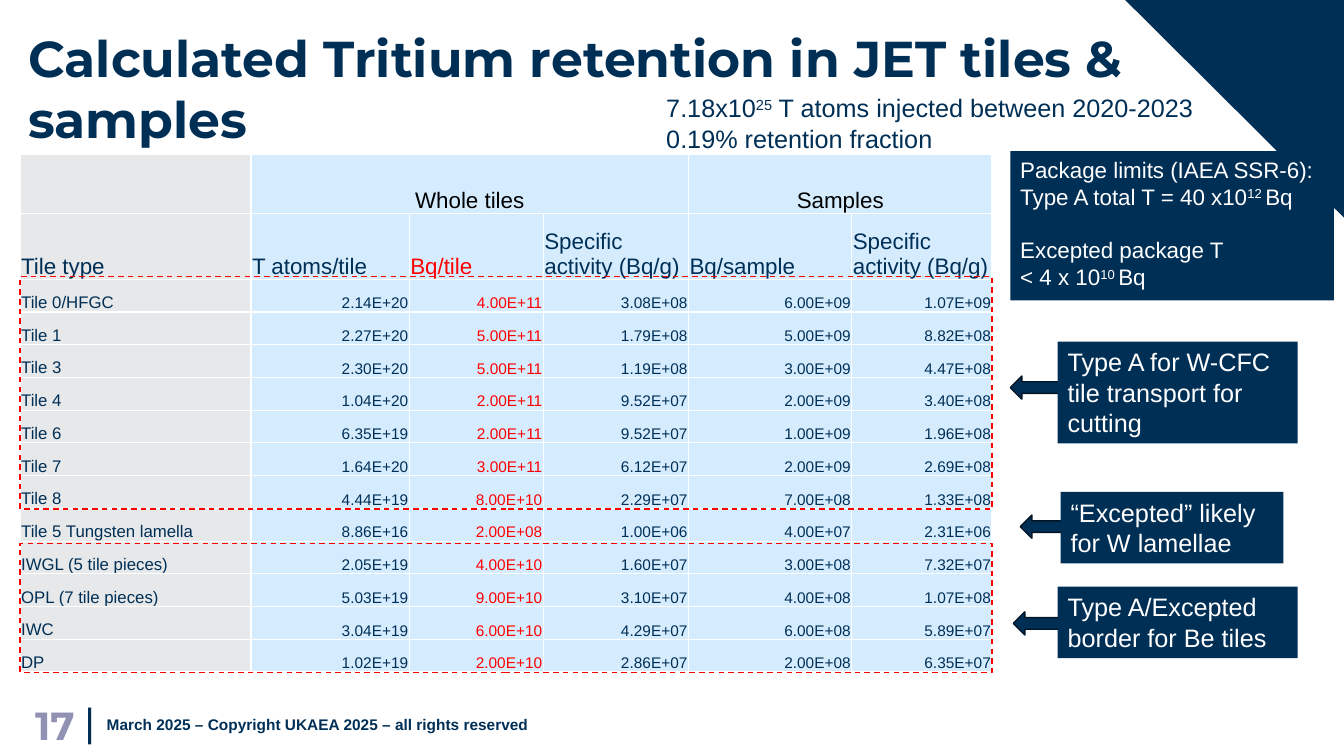
from lxml import etree
from pptx import Presentation
from pptx.dml.color import RGBColor
from pptx.enum import dml, shapes, text
from pptx.oxml import ns
from pptx.util import Inches, Pt

NAVY, WHITE, RED, BLACK = "002F56", "FFFFFF", "FF0000", "000000"
GREY, PALE, LILAC, EDGE = "E7E8E9", "D5ECFF", "9091B3", "001526"
LEFT, CENTER, RIGHT = text.PP_ALIGN.LEFT, text.PP_ALIGN.CENTER, text.PP_ALIGN.RIGHT
TOP, MIDDLE = text.MSO_ANCHOR.TOP, text.MSO_ANCHOR.MIDDLE

COLUMN_WIDTHS = [2.29, 1.57, 1.33, 1.44, 1.62, 1.39]
ROW_HEIGHTS = [0.59, 0.65] + [3.9 / 12] * 12
ROWS = [
    ["", "Whole tiles", "", "", "Samples", ""],
    ["Tile type", "T atoms/tile", "Bq/tile", "Specific activity (Bq/g)", "Bq/sample", "Specific activity (Bq/g)"],
    ["Tile 0/HFGC", "2.14E+20", "4.00E+11", "3.08E+08", "6.00E+09", "1.07E+09"],
    ["Tile 1", "2.27E+20", "5.00E+11", "1.79E+08", "5.00E+09", "8.82E+08"],
    ["Tile 3", "2.30E+20", "5.00E+11", "1.19E+08", "3.00E+09", "4.47E+08"],
    ["Tile 4", "1.04E+20", "2.00E+11", "9.52E+07", "2.00E+09", "3.40E+08"],
    ["Tile 6", "6.35E+19", "2.00E+11", "9.52E+07", "1.00E+09", "1.96E+08"],
    ["Tile 7", "1.64E+20", "3.00E+11", "6.12E+07", "2.00E+09", "2.69E+08"],
    ["Tile 8", "4.44E+19", "8.00E+10", "2.29E+07", "7.00E+08", "1.33E+08"],
    ["Tile 5 Tungsten lamella", "8.86E+16", "2.00E+08", "1.00E+06", "4.00E+07", "2.31E+06"],
    ["IWGL (5 tile pieces)", "2.05E+19", "4.00E+10", "1.60E+07", "3.00E+08", "7.32E+07"],
    ["OPL (7 tile pieces)", "5.03E+19", "9.00E+10", "3.10E+07", "4.00E+08", "1.07E+08"],
    ["IWC", "3.04E+19", "6.00E+10", "4.29E+07", "6.00E+08", "5.89E+07"],
    ["DP", "1.02E+19", "2.00E+10", "2.86E+07", "2.00E+08", "6.35E+07"],
]
CALLOUTS = [
    ("Type A for W-CFC tile transport for cutting", (10.49, 3.39, 2.38, 1.01), (10.02, 3.73)),
    ("“Excepted” likely for W lamellae", (10.52, 4.88, 2.21, 0.71), (10.12, 5.11)),
    ("Type A/Excepted border for Be tiles", (10.49, 5.82, 2.38, 0.71), (10.05, 6.07)),
]


def rgb(value):
    return RGBColor.from_string(value)


class TilePage:
    def __init__(self, deck):
        self.page = deck.slides.add_slide(deck.slide_layouts[6])

    def style(self, font, size, color, bold=False, name="Arial"):
        font.name, font.size, font.bold = name, Pt(size), bold
        font.color.rgb = rgb(color)

    def fill_text(self, frame, lines, size, color, align=LEFT, bold=False, name="Arial"):
        frame.text = "\n".join([""] * len(lines))
        for para, line in zip(frame.paragraphs, lines):
            para.alignment = align
            for index, piece in enumerate(line.split("^")):
                span = para.add_run()
                span.text = piece
                self.style(span.font, size, color, bold, name)
                if index % 2:
                    span._r.get_or_add_rPr().set("baseline", "30000")

    def label(self, place, lines, size, color=NAVY, anchor=TOP, wrap=True, inset=0.1, **look):
        box = self.page.shapes.add_textbox(*map(Inches, place))
        frame = box.text_frame
        frame.word_wrap, frame.vertical_anchor = wrap, anchor
        frame.margin_left = frame.margin_right = Inches(inset)
        self.fill_text(frame, lines, size, color, **look)

    def shape(self, kind, place, fill=None, line=None, dashed=False):
        item = self.page.shapes.add_shape(kind, *map(Inches, place))
        self.paint(item, fill, line)
        if dashed:
            item.line.dash_style = dml.MSO_LINE.DASH
        return item

    def paint(self, item, fill, line=None):
        item.shadow.inherit = False
        if fill:
            item.fill.solid()
            item.fill.fore_color.rgb = rgb(fill)
        else:
            item.fill.background()
        if line:
            item.line.color.rgb = rgb(line)
            item.line.width = Pt(1)
        else:
            item.line.fill.background()

    def panel(self, place, lines, size):
        frame = self.shape(shapes.MSO_SHAPE.RECTANGLE, place, NAVY).text_frame
        frame.word_wrap, frame.vertical_anchor = True, TOP
        self.fill_text(frame, lines, size, WHITE)
        return frame

    def arrow(self, left, top):
        self.shape(shapes.MSO_SHAPE.LEFT_ARROW, (left, top, 0.5, 0.23), NAVY, EDGE)

    def outline(self, place):
        self.shape(shapes.MSO_SHAPE.RECTANGLE, place, line=RED, dashed=True)

    def corner(self, points):
        first, *rest = [(Inches(x), Inches(y)) for x, y in points]
        builder = self.page.shapes.build_freeform(*first)
        builder.add_line_segments(rest, close=True)
        self.paint(builder.convert_to_shape(), NAVY)

    def cell(self, cell, words, size, color, align, fill):
        properties = cell._tc.get_or_add_tcPr()
        for side in ("lnL", "lnR", "lnT", "lnB"):
            border = etree.SubElement(properties, ns.qn(f"a:{side}"), w=str(Pt(1)))
            solid = etree.SubElement(border, ns.qn("a:solidFill"))
            etree.SubElement(solid, ns.qn("a:srgbClr"), val=WHITE)
        cell.fill.solid()
        cell.fill.fore_color.rgb = rgb(fill)
        cell.margin_left = cell.margin_right = cell.margin_top = Inches(0.01)
        cell.margin_bottom = 0
        cell.vertical_anchor = text.MSO_ANCHOR.BOTTOM
        if words:
            self.fill_text(cell.text_frame, [words], size, color, align)

    def table(self, left, top):
        sizes = map(Inches, (left, top, sum(COLUMN_WIDTHS), sum(ROW_HEIGHTS)))
        grid = self.page.shapes.add_table(len(ROWS), len(COLUMN_WIDTHS), *sizes).table
        grid.first_row = grid.horz_banding = False
        for column, width in zip(grid.columns, COLUMN_WIDTHS):
            column.width = Inches(width)
        for row, height in zip(grid.rows, ROW_HEIGHTS):
            row.height = Inches(height)
        for r, row in enumerate(ROWS):
            for c, words in enumerate(row):
                size = 16 if r < 2 else 11 if c else 12
                color = BLACK if r == 0 else RED if c == 2 else NAVY
                align = CENTER if r == 0 else RIGHT if r > 1 and c else LEFT
                self.cell(grid.cell(r, c), words, size, color, align, PALE if c else GREY)
        for start, end in ((1, 3), (4, 5)):
            grid.cell(0, start).merge(grid.cell(0, end))


def main():
    deck = Presentation()
    deck.slide_width, deck.slide_height = Inches(13.33), Inches(7.5)
    page = TilePage(deck)
    page.corner([(13.33, 0), (13.33, 2.16), (11.16, 0)])
    page.label((0.84, 6.95, 0.05, 0.4), ["|"], 28, anchor=MIDDLE, wrap=False, inset=0)
    page.label((0.18, 0.22, 11.37, 1.45), ["Calculated Tritium retention in JET tiles & samples"],
               36, bold=True, name="Montserrat")
    page.label((0.96, 6.99, 7.66, 0.4), ["March 2025 – Copyright UKAEA 2025 – all rights reserved"],
               11, anchor=MIDDLE, bold=True)
    page.label((6.51, 0.87, 5.64, 0.71),
               ["7.18x10^25^ T atoms injected between 2020-2023", "0.19% retention fraction"], 18, wrap=False)
    page.table(0.2, 1.53)
    page.label((0.11, 6.99, 0.73, 0.4), ["17"], 28, LILAC, MIDDLE, align=RIGHT, bold=True, name="Montserrat")
    page.outline((0.2, 2.74, 9.64, 2.31))
    page.outline((0.2, 5.39, 9.64, 1.28))
    limits = page.panel((10.02, 1.5, 3.21, 1.48),
                        ["Package limits (IAEA SSR-6):", "Type A total T = 40 x10^12 ^Bq",
                         "Excepted package T", "< 4 x 10^10 ^Bq"], 16)
    limits.paragraphs[2].space_before = Pt(19)
    for words, place, arrow_place in CALLOUTS:
        page.arrow(*arrow_place)
        page.panel(place, [words], 18)
    deck.save("out.pptx")


if __name__ == "__main__":
    main()
